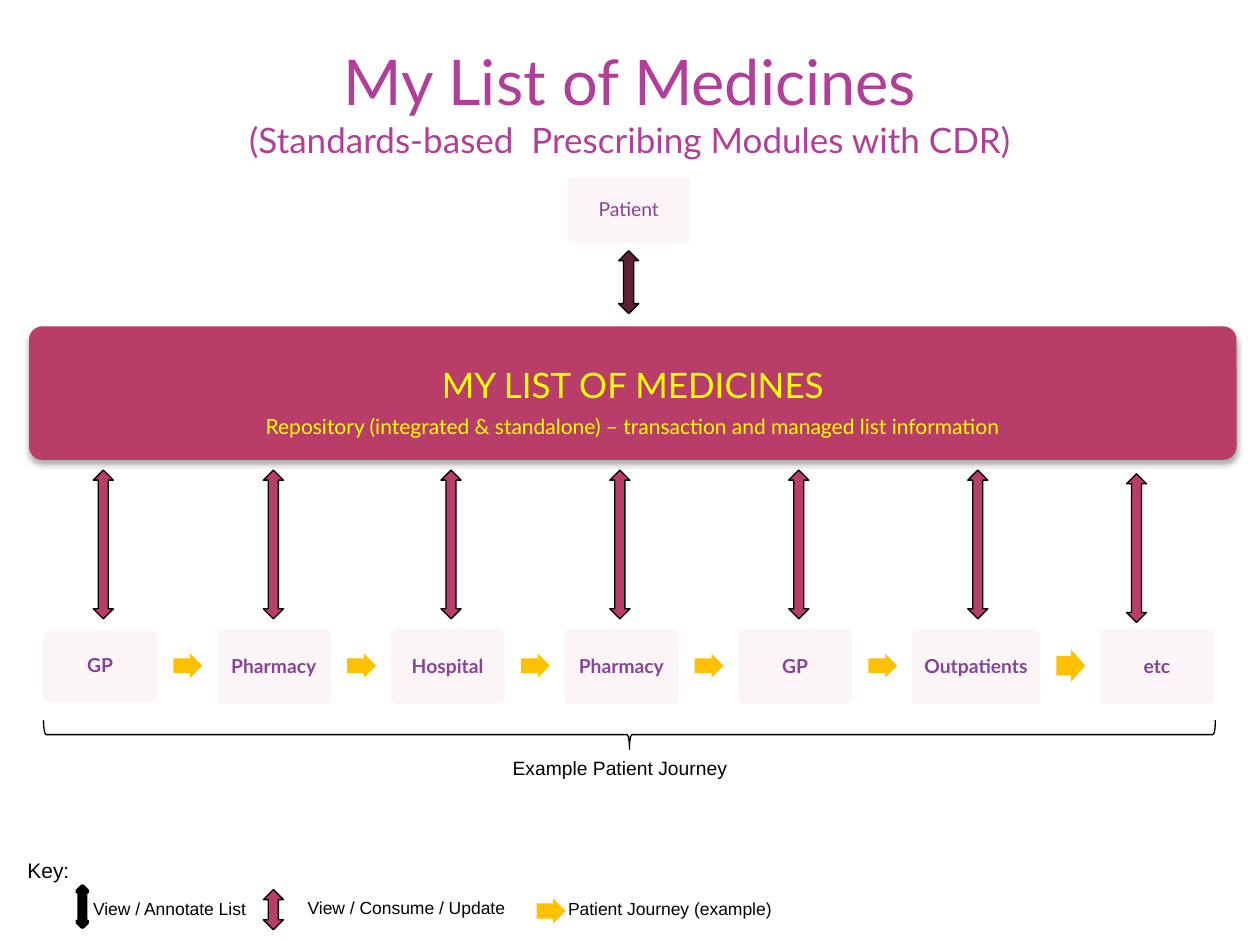
"""Build the My List of Medicines patient journey slide."""
from dataclasses import dataclass

import lxml.etree
import pptx
import pptx.dml.color
import pptx.enum.shapes
import pptx.enum.text
import pptx.oxml
import pptx.oxml.ns
import pptx.util

Pt = pptx.util.Pt
MSO = pptx.enum.shapes.MSO_SHAPE
ALIGN = pptx.enum.text.PP_ALIGN
ANCHOR = pptx.enum.text.MSO_ANCHOR


@dataclass(frozen=True)
class Theme:
    heading_font: str = "Lato"
    label_font: str = "Arial"
    title: str = "B13F9A"
    stop_text: str = "874396"
    stop_fill: str = "FBF5F8"
    white: str = "FFFFFF"
    black: str = "000000"
    journey: str = "FFC000"
    update: str = "B83D68"
    annotate: str = "5C1F34"
    banner_text: str = "FFFF00"
    title_size: float = 36
    subtitle_size: float = 20
    detail_size: float = 12
    stop_size: float = 11
    key_size: float = 10


@dataclass(frozen=True)
class Stop:
    name: str
    link_left: float
    width: float = 68.4
    top: float = 358
    height: float = 46
    link_top: float = 268.6
    arrow_height: float = 13.7


@dataclass(frozen=True)
class Label:
    text: str
    left: float
    top: float
    width: float
    height: float
    size: float
    align: ALIGN = ALIGN.LEFT
    wrap: bool = True


THEME = Theme()
STOP_GAP = 30.9
JOURNEY_MIDDLE = 380.4
STOPS = [
    Stop("GP", 53.3, top=359.3, height=43.2),
    Stop("Pharmacy", 150.5),
    Stop("Hospital", 252),
    Stop("Pharmacy", 348.5),
    Stop("GP", 450.7),
    Stop("Outpatients", 553, width=76.5, arrow_height=18.7),
    Stop("etc", 643.7, link_top=270.7),
]
LABELS = [
    Label("Key:", 8.6, 486.7, 41, 21.6, THEME.detail_size),
    Label("View / Annotate List", 37.4, 509.8, 118.8, 19.4, THEME.key_size, ALIGN.CENTER),
    Label("View / Consume / Update", 150.5, 509, 163.4, 19.4, THEME.key_size, ALIGN.CENTER),
    Label("Patient Journey (example)", 317.5, 509.4, 140.4, 20, THEME.key_size),
    Label("Example Patient Journey", 285.8, 428.4, 146, 21, THEME.stop_size, wrap=False),
]


def rgb(value: str) -> pptx.dml.color.RGBColor:
    return pptx.dml.color.RGBColor.from_string(value)


def write(tf, text: str, *, size: float, color: str, font: str = THEME.heading_font,
          bold: bool = False, align: ALIGN = ALIGN.CENTER,
          spacing: float | None = None, before: float | None = None) -> None:
    p = tf.paragraphs[0] if not tf.text else tf.add_paragraph()
    p.alignment = align
    if spacing is not None:
        p.line_spacing = spacing
    if before is not None:
        p.space_before = Pt(before)
    r = p.add_run()
    r.text = text
    r.font.name = font
    r.font.size = Pt(size)
    r.font.bold = bold
    r.font.color.rgb = rgb(color)


def add_shape(s, kind: MSO, left: float, top: float, width: float, height: float, *,
              fill: str | None = None, line: str | None = None, weight: float = 0.75,
              adjust: tuple[float, ...] = ()):
    sp = s.shapes.add_shape(kind, Pt(left), Pt(top), Pt(width), Pt(height))
    sp.shadow.inherit = False
    for i, value in enumerate(adjust):
        sp.adjustments[i] = value
    if fill:
        sp.fill.solid()
        sp.fill.fore_color.rgb = rgb(fill)
    else:
        sp.fill.background()
    if line:
        sp.line.color.rgb = rgb(line)
        sp.line.width = Pt(weight)
    else:
        sp.line.fill.background()
    return sp


def add_box(s, text: str, left: float, top: float, width: float, height: float,
            bold: bool = True) -> None:
    sp = add_shape(s, MSO.ROUNDED_RECTANGLE, left, top, width, height, fill=THEME.stop_fill,
                   line=THEME.white, weight=3.15, adjust=(0.1,))
    tf = sp.text_frame
    tf.word_wrap = True
    tf.vertical_anchor = ANCHOR.MIDDLE
    tf.margin_left = tf.margin_right = tf.margin_top = tf.margin_bottom = Pt(3.6)
    write(tf, text, size=THEME.stop_size, color=THEME.stop_text, bold=bold, spacing=0.9)


def add_link(s, left: float, top: float, height: float, fill: str = THEME.update,
             width: float = 11.5, weight: float = 0.75) -> None:
    add_shape(s, MSO.UP_DOWN_ARROW, left, top, width, height, fill=fill,
              line=THEME.black, weight=weight)


def add_journey_arrow(s, left: float, middle: float, height: float) -> None:
    add_shape(s, MSO.RIGHT_ARROW, left, middle - height / 2, 16.5, height,
              fill=THEME.journey, adjust=(0.6, 0.5))


def add_label(s, label: Label) -> None:
    sp = s.shapes.add_textbox(Pt(label.left), Pt(label.top), Pt(label.width), Pt(label.height))
    tf = sp.text_frame
    tf.word_wrap = label.wrap
    write(tf, label.text, size=label.size, color=THEME.black, font=THEME.label_font,
          align=label.align)


def add_title(s) -> None:
    sp = s.shapes.title
    sp.left, sp.top, sp.width, sp.height = Pt(36), Pt(20.9), Pt(648), Pt(44)
    tf = sp.text_frame
    tf.auto_size = pptx.enum.text.MSO_AUTO_SIZE.NONE
    tf.vertical_anchor = ANCHOR.TOP
    write(tf, "My List of Medicines", size=THEME.title_size, color=THEME.title)
    write(tf, "(Standards-based  Prescribing Modules with CDR)",
          size=THEME.subtitle_size, color=THEME.title)


def add_banner(s) -> None:
    sp = add_shape(s, MSO.ROUNDED_RECTANGLE, 16.6, 186.5, 690, 76.3,
                   fill=THEME.update, adjust=(0.1,))
    effects = sp._element.spPr.find(pptx.oxml.ns.qn("a:effectLst"))
    shadow = lxml.etree.SubElement(effects, pptx.oxml.ns.qn("a:outerShdw"), blurRad=str(Pt(3.5)),
                                   dist=str(Pt(2.2)), dir="5400000", rotWithShape="0")
    color = lxml.etree.SubElement(shadow, pptx.oxml.ns.qn("a:srgbClr"), val=THEME.black)
    lxml.etree.SubElement(color, pptx.oxml.ns.qn("a:alpha"), val="32000")
    sp = add_shape(s, MSO.RECTANGLE, 28, 210.2, 667.4, 48.2, fill=THEME.update)
    tf = sp.text_frame
    tf.word_wrap = True
    tf.vertical_anchor = ANCHOR.TOP
    tf.margin_left = tf.margin_right = tf.margin_bottom = Pt(3.6)
    tf.margin_top = Pt(0)
    write(tf, "MY LIST OF MEDICINES", size=THEME.subtitle_size, color=THEME.banner_text,
          spacing=0.9)
    write(tf, "Repository (integrated & standalone) – transaction and managed list information",
          size=THEME.detail_size, color=THEME.banner_text, spacing=0.9, before=6)


def add_journey(s) -> None:
    left = 23
    for stop in STOPS:
        add_box(s, stop.name, left, stop.top, stop.width, stop.height)
        add_link(s, stop.link_left, stop.link_top, 85)
        left += stop.width
        if stop is not STOPS[-1]:
            add_journey_arrow(s, left + 7.7, JOURNEY_MIDDLE, stop.arrow_height)
        left += STOP_GAP
    sp = add_shape(s, MSO.RIGHT_BRACE, 351.4, 85, 16.6, 669.6, line=THEME.black,
                   adjust=(0.08, 0.5))
    sp.rotation = 90


def main() -> None:
    prs = pptx.Presentation()
    prs.slide_width, prs.slide_height = Pt(720), Pt(540)
    s = prs.slides.add_slide(prs.slide_layouts[5])
    add_title(s)
    add_box(s, "Patient", 322.6, 100.1, 73.4, 40.3, bold=False)
    add_link(s, 353.5, 143.3, 36, THEME.annotate)
    add_banner(s)
    add_journey(s)
    for label in LABELS:
        add_label(s, label)
    add_link(s, 44.6, 506.9, 22.3, THEME.black, width=5, weight=3.15)
    add_link(s, 150.5, 508.3, 23)
    add_journey_arrow(s, 306.7, 520.6, 14.4)
    prs.save("out.pptx")


if __name__ == "__main__":
    main()
